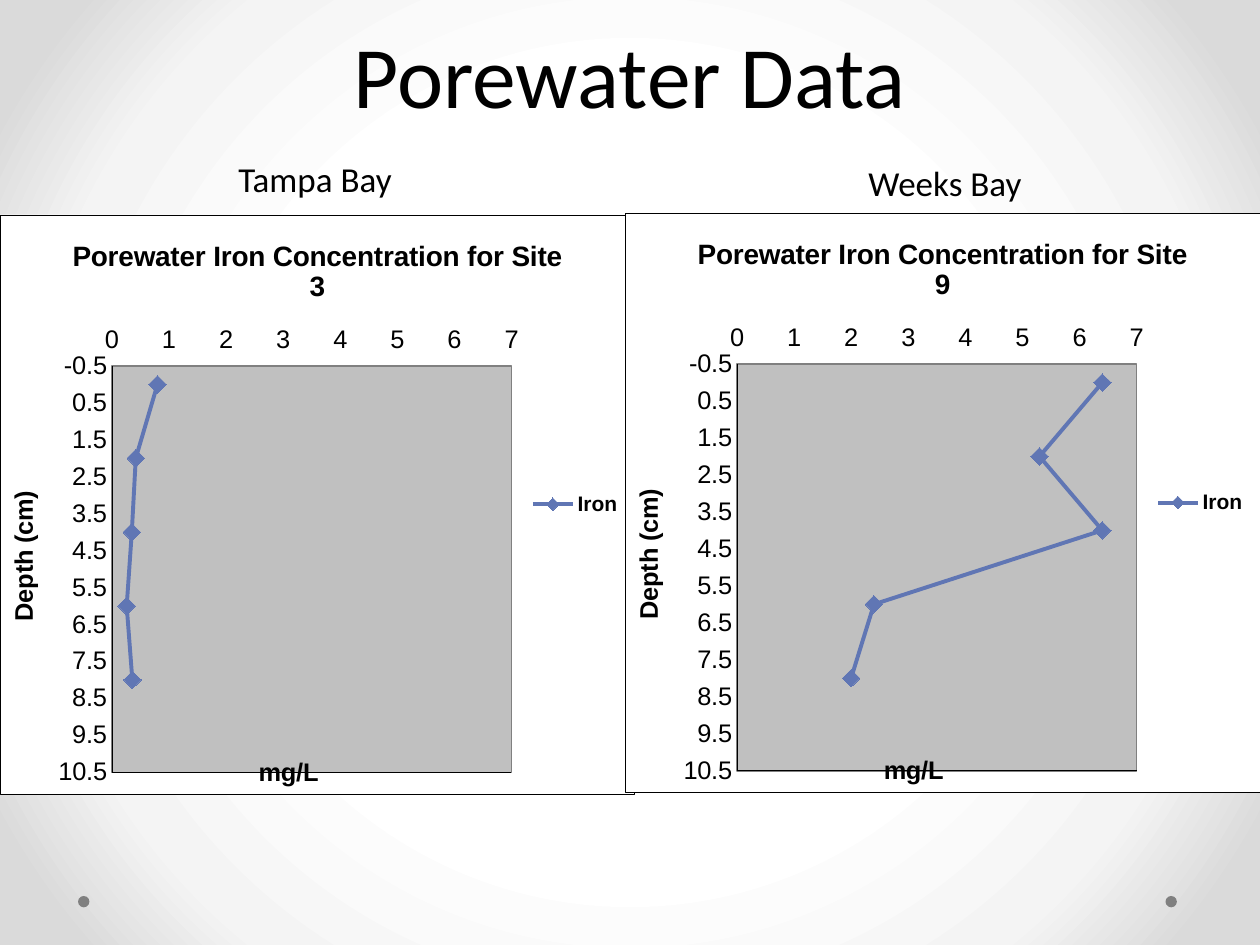
"""Build the Porewater Data slide with two depth profiles of iron."""
from pptx import Presentation
from pptx.chart.data import XyChartData
from pptx.dml.color import RGBColor
from pptx.enum.chart import (XL_AXIS_CROSSES, XL_CHART_TYPE, XL_LEGEND_POSITION,
                             XL_MARKER_STYLE, XL_TICK_LABEL_POSITION, XL_TICK_MARK)
from pptx.enum.shapes import MSO_SHAPE
from pptx.enum.text import MSO_ANCHOR, PP_ALIGN
from pptx.oxml import parse_xml
from pptx.oxml.ns import nsdecls, qn
from pptx.util import Pt

HUES = {"ink": "000000", "white": "FFFFFF", "pale": "F4F4F4", "edge": "DADADA",
        "dot": "808080", "plot": "C0C0C0", "iron": "6076B4"}
INK = RGBColor.from_string(HUES["ink"])


def label(box, text, size):
    frame = box.text_frame
    frame.word_wrap = True
    frame.vertical_anchor = MSO_ANCHOR.TOP
    frame.text = text
    para = frame.paragraphs[0]
    para.alignment = PP_ALIGN.CENTER
    font = para.runs[0].font
    font.name, font.size, font.color.rgb = "Calibri", Pt(size), INK


def panel(fill, line, width):
    return parse_xml(
        f'<c:spPr {nsdecls("c", "a")}><a:solidFill><a:srgbClr val="{HUES[fill]}"/></a:solidFill>'
        f'<a:ln w="{Pt(width)}"><a:solidFill><a:srgbClr val="{HUES[line]}"/></a:solidFill></a:ln></c:spPr>')


deck = Presentation()
deck.slide_width, deck.slide_height = Pt(720), Pt(540)
slide = deck.slides.add_slide(deck.slide_layouts[5])
shapes = slide.shapes

stops = "".join(f'<a:gs pos="{pos}000"><a:srgbClr val="{HUES[hue]}"/></a:gs>'
                for pos, hue in ((50, "white"), (76, "pale"), (92, "edge")))
slide._element.cSld.insert(0, parse_xml(
    f'<p:bg {nsdecls("p", "a")}><p:bgPr><a:gradFill rotWithShape="1"><a:gsLst>{stops}</a:gsLst>'
    '<a:path path="circle"><a:fillToRect l="50000" t="50000" r="50000" b="50000"/></a:path>'
    '</a:gradFill><a:effectLst/></p:bgPr></p:bg>'))

for left in (666, 44.6):
    dot = shapes.add_shape(MSO_SHAPE.OVAL, Pt(left), Pt(512), Pt(6.5), Pt(6.5))
    dot.shadow.inherit = False
    dot.fill.solid()
    dot.fill.fore_color.rgb = RGBColor.from_string(HUES["dot"])
    dot.line.fill.background()

title = shapes.title
title.left, title.top, title.width, title.height = Pt(0), Pt(8.6), Pt(720), Pt(67.7)
label(title, "Porewater Data", 50)

depths = (0, 2, 4, 6, 8)
sites = (
    ("Tampa Bay", 3, 0, 86.4, 0, 122.6, (0.8, 0.42, 0.35, 0.26, 0.36)),
    ("Weeks Bay", 9, 360, 88.6, 357.2, 121.6, (6.4, 5.3, 6.4, 2.4, 2)),
)
for bay, site, left, top, side, high, irons in sites:
    label(shapes.add_textbox(Pt(left), Pt(top), Pt(360), Pt(31.5)), bay, 20)

    data = XyChartData()
    points = data.add_series("Iron")
    for iron, depth in zip(irons, depths):
        points.add_data_point(iron, depth)
    chart = shapes.add_chart(XL_CHART_TYPE.XY_SCATTER_SMOOTH, Pt(side), Pt(high),
                             Pt(362.8), Pt(331.2), data).chart
    chart.font.name, chart.font.size, chart.font.color.rgb = "Arial", Pt(14.5), INK

    chart.has_legend = True
    legend = chart.legend
    legend.position = XL_LEGEND_POSITION.RIGHT
    legend.include_in_layout = False
    legend.font.name, legend.font.size = "Arial", Pt(12)
    legend.font.bold, legend.font.color.rgb = True, INK

    across, down = chart.category_axis, chart.value_axis
    heads = ((chart, f"Porewater Iron Concentration for Site {site}", 16),
             (across, "mg/L", 14.5), (down, "Depth (cm)", 14.5))
    for part, text, size in heads:
        part.has_title = True
        frame = (chart.chart_title if part is chart else part.axis_title).text_frame
        frame.text = text
        font = frame.paragraphs[0].runs[0].font
        font.name, font.size, font.bold, font.color.rgb = "Arial", Pt(size), True, INK

    for axis, low, top_end, form in ((across, 0, 7, "0"), (down, -0.5, 10.5, "General")):
        axis.minimum_scale, axis.maximum_scale, axis.major_unit = low, top_end, 1
        axis.has_major_gridlines = False
        axis.major_tick_mark = axis.minor_tick_mark = XL_TICK_MARK.NONE
        axis.tick_labels.number_format = form
        axis.tick_labels.number_format_is_linked = False
        axis.format.line.color.rgb, axis.format.line.width = INK, Pt(0.25)
    across.tick_label_position = XL_TICK_LABEL_POSITION.LOW
    down.reverse_order = True
    down.crosses = XL_AXIS_CROSSES.MAXIMUM

    curve = chart.plots[0].series[0]
    curve.smooth = True
    hue = RGBColor.from_string(HUES["iron"])
    curve.format.line.color.rgb, curve.format.line.width = hue, Pt(2.25)
    mark = curve.marker
    mark.style, mark.size = XL_MARKER_STYLE.DIAMOND, 10
    mark.format.fill.solid()
    mark.format.fill.fore_color.rgb = hue
    mark.format.line.color.rgb = hue

    root = chart._chartSpace
    root.find(qn("c:chart")).addnext(panel("white", "ink", 0.25))
    area = root.find(qn("c:chart")).find(qn("c:plotArea"))
    area.append(panel("plot", "dot", 1))
    for old in area.findall(qn("c:layout")):
        area.remove(old)
    spots = "".join(f'<c:{key} val="{val}"/>' for key, val in (
        ("layoutTarget", "inner"), ("xMode", "edge"), ("yMode", "edge"),
        ("x", 0.176), ("y", 0.261), ("w", 0.63), ("h", 0.702)))
    area.insert(0, parse_xml(
        f'<c:layout {nsdecls("c")}><c:manualLayout>{spots}</c:manualLayout></c:layout>'))

deck.save("out.pptx")
